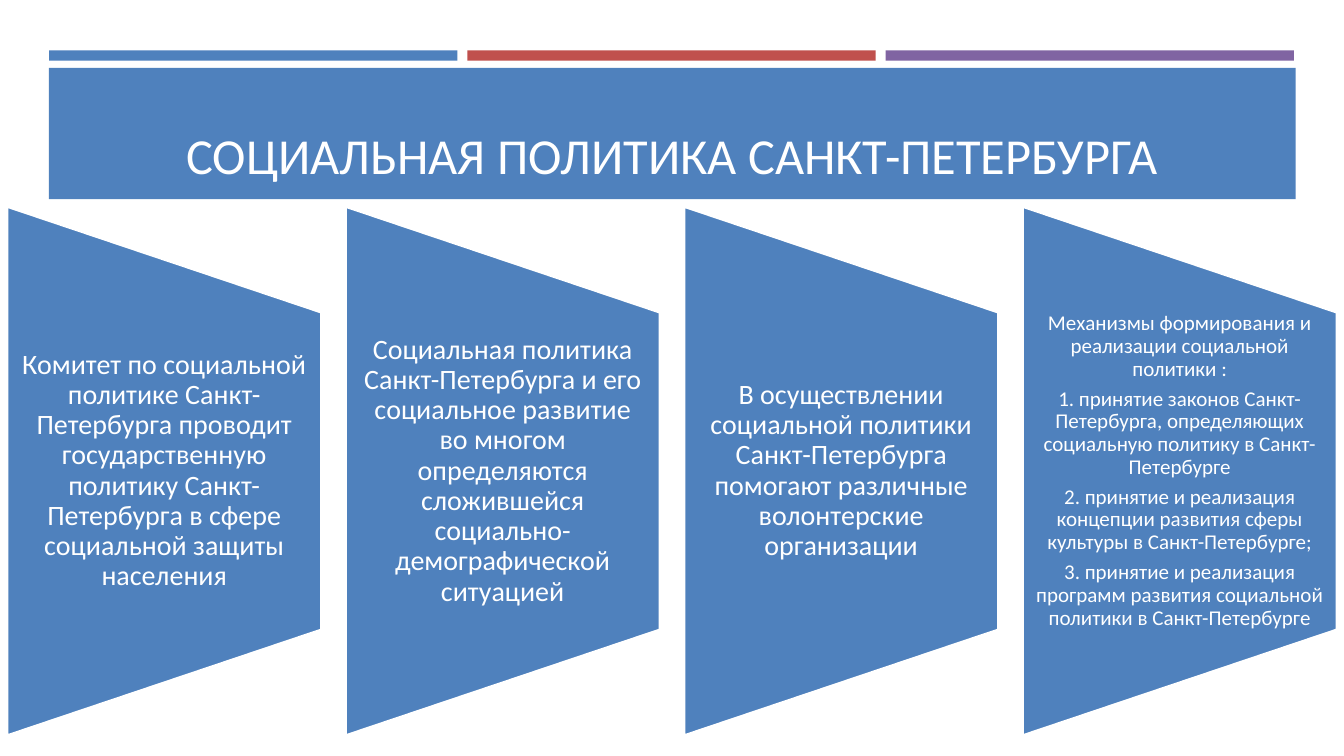
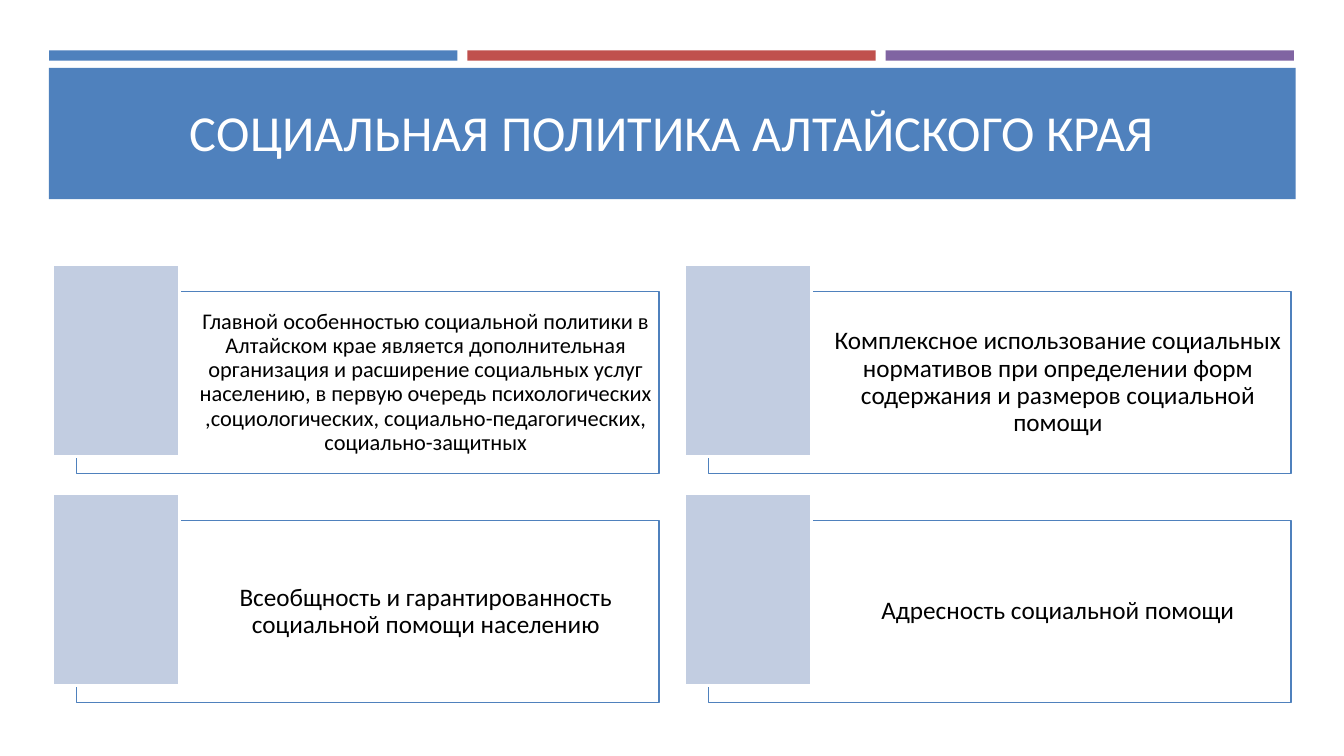
from pptx import Presentation
from pptx.dml.color import RGBColor
from pptx.enum.shapes import MSO_SHAPE
from pptx.enum.text import MSO_ANCHOR, PP_ALIGN
from pptx.util import Cm, Pt

RECT, TRAP = MSO_SHAPE.RECTANGLE, MSO_SHAPE.FLOWCHART_MANUAL_OPERATION
MID, LOW = MSO_ANCHOR.MIDDLE, MSO_ANCHOR.BOTTOM
CENTER = PP_ALIGN.CENTER

FONT = "Calibri"
BLUE, RED, PURPLE = "4F81BD", "C0504D", "8064A2"
PALE, WHITE, BLACK = "C2CDE1", "FFFFFF", "000000"

# Content: title and its top in cm, then (text size, side inset, paragraphs)
CITY = ("СОЦИАЛЬНАЯ ПОЛИТИКА САНКТ-ПЕТЕРБУРГА", 1.96)
PANELS = [
    (20, 0.23, ["Комитет по социальной политике Санкт-Петербурга проводит "
                "государственную политику Санкт-Петербурга в сфере "
                "социальной защиты населения"]),
    (20, 0.36, ["Социальная политика Санкт-Петербурга и его социальное "
                "развитие во многом определяются сложившейся "
                "социально-демографической ситуацией"]),
    (20, 0.36, ["В осуществлении социальной политики Санкт-Петербурга "
                "помогают различные волонтерские организации"]),
    (15, 0.25, ["Механизмы формирования и реализации социальной политики :",
                "1. принятие законов Санкт-Петербурга, определяющих "
                "социальную политику в Санкт-Петербурге",
                "2. принятие и реализация концепции развития сферы "
                "культуры в Санкт-Петербурге;",
                "3. принятие и реализация программ развития социальной "
                "политики в Санкт-Петербурге"]),
]

REGION = ("СОЦИАЛЬНАЯ ПОЛИТИКА АЛТАЙСКОГО КРАЯ", 1.37)
CARDS = [
    (16, "Главной особенностью социальной политики в Алтайском крае является "
         "дополнительная организация и расширение социальных услуг населению, "
         "в первую очередь психологических ,социологических, "
         "социально-педагогических, социально-защитных"),
    (18, "Комплексное использование социальных нормативов при определении "
         "форм содержания и размеров социальной помощи"),
    (18, "Всеобщность и гарантированность социальной помощи населению"),
    (18, "Адресность социальной помощи"),
]


def rgb(code):
    return RGBColor.from_string(code)


def put(item, **values):
    for name, value in values.items():
        setattr(item, name, value)


def shape(slide, kind, box, fill, line=None, width=1.75):
    item = slide.shapes.add_shape(kind, *map(Cm, box))
    item.shadow.inherit = False
    item.fill.solid()
    item.fill.fore_color.rgb = rgb(fill)
    if line:
        item.line.color.rgb = rgb(line)
        item.line.width = Pt(width)
    else:
        item.line.fill.background()
    return item


def write(item, paras, size, color, inset, anchor=MID, tight=True):
    frame = item.text_frame
    left, top, right, bottom = map(Cm, inset)
    put(frame, word_wrap=True, vertical_anchor=anchor, margin_left=left,
        margin_top=top, margin_right=right, margin_bottom=bottom)
    frame.text = "\n".join(paras)
    for para in frame.paragraphs:
        para.alignment = CENTER
        if tight:
            put(para, line_spacing=0.9, space_after=Pt(size * 0.35))
        put(para.font, name=FONT, size=Pt(size))
        para.font.color.rgb = rgb(color)


def add_slide(deck, title, top):
    slide = deck.slides.add_slide(deck.slide_layouts[6])
    # Three stripes above the title band
    for i, color in enumerate((BLUE, RED, PURPLE)):
        shape(slide, RECT, (1.24 + i * 10.54, 1.27, 10.29, 0.26), color)
    shape(slide, RECT, (1.23, 1.71, 31.42, 3.31), BLUE)
    head = slide.shapes.add_textbox(Cm(1.62), Cm(top), Cm(30.64), Cm(2.82))
    write(head, [title], 36, WHITE, (0.25, 0.13, 0.25, 0.13), LOW, False)
    return slide


def city(deck):
    slide = add_slide(deck, *CITY)
    wide, tall, step, mid = 7.92, 13.33, 8.53, 11.87
    high = tall * 0.6
    for i, (size, side, paras) in enumerate(PANELS):
        left = 0.18 + i * step
        # Turned a quarter, so its width runs down the slide
        panel = shape(slide, TRAP, (left + (wide - tall) / 2, mid - wide / 2,
                                    tall, wide), BLUE, WHITE)
        panel.rotation = 270
        label = slide.shapes.add_textbox(Cm(left), Cm(mid - high / 2),
                                         Cm(wide), Cm(high))
        write(label, paras, size, WHITE, (side, 0, side, 0))


def region(deck):
    slide = add_slide(deck, *REGION)
    for i, (size, text) in enumerate(CARDS):
        row, col = divmod(i, 2)
        left, top = 1.93 + col * 15.93, 7.34 + row * 5.77
        card = shape(slide, RECT, (left, top, 14.68, 4.6), WHITE, BLUE, 1)
        write(card, [text], size, BLACK, (3.1, 0.18, 0.18, 0.18))
        # Pale tile over the card's corner
        shape(slide, RECT, (left - 0.61, top - 0.66, 3.2, 4.83), PALE, WHITE)


def main():
    deck = Presentation()
    put(deck, slide_width=Cm(33.87), slide_height=Cm(19.05))
    city(deck)
    region(deck)
    deck.save("out.pptx")


if __name__ == "__main__":
    main()
